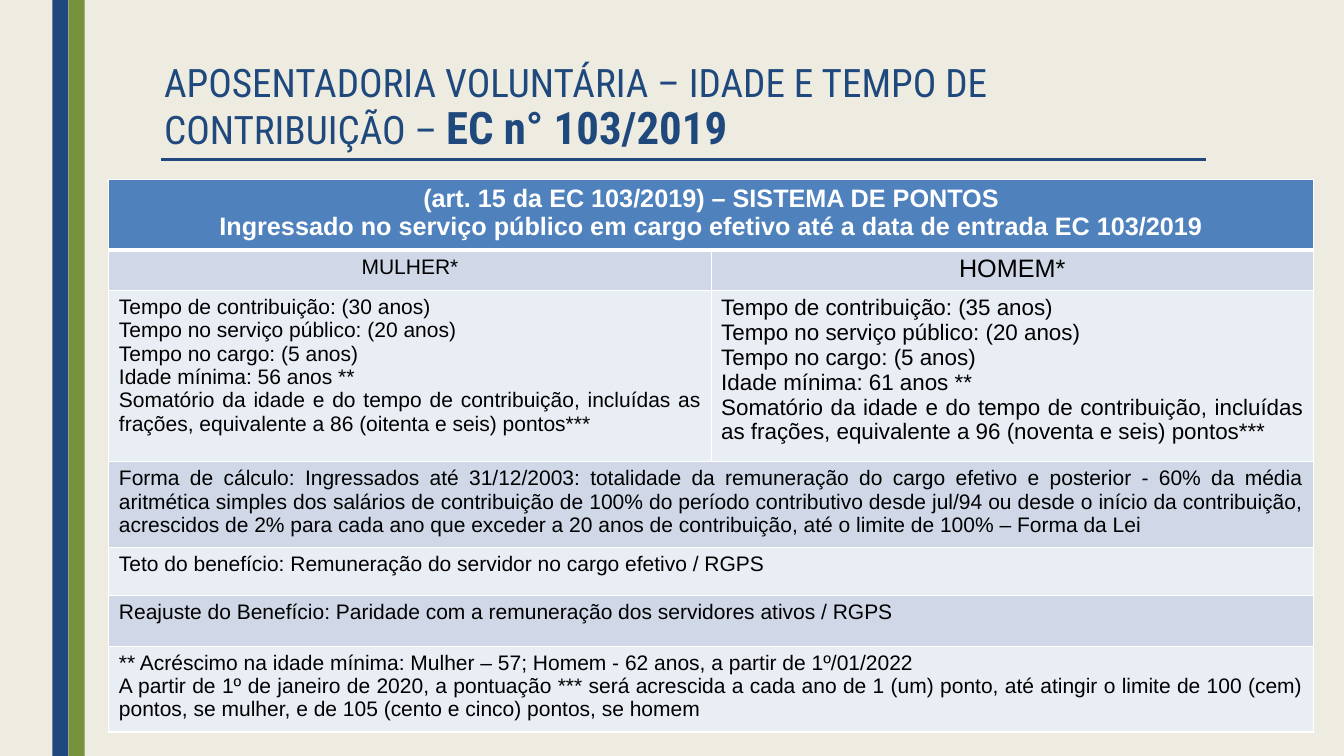
from lxml import etree
from pptx import Presentation, util as u
from pptx.dml.color import RGBColor
from pptx.enum import shapes, text
from pptx.oxml.ns import qn

COLORS = {"background": "EEECE1", "navy": "1F497D", "green": "76923C", "header": "4F81BD",
          "band": "D0D8E8", "light": "E9EDF4", "white": "FFFFFF", "black": "000000"}
COLUMNS, ROWS = 160, 90
CENTER, JUSTIFY = text.PP_ALIGN.CENTER, text.PP_ALIGN.JUSTIFY


class SlideBuilder:
    """Holds the style and the current slide; lengths are grid columns and rows."""

    def __init__(self, presentation):
        self.presentation = presentation
        self.slide = presentation.slides.add_slide(presentation.slide_layouts[6])
        self.paint(self.slide.background.fill, "background")

    def x(self, columns):
        return round(self.presentation.slide_width * columns / COLUMNS)

    def y(self, rows):
        return round(self.presentation.slide_height * rows / ROWS)

    def box(self, left, top, width, height):
        return self.x(left), self.y(top), self.x(width), self.y(height)

    def paint(self, fill, color):
        fill.solid()
        fill.fore_color.rgb = RGBColor.from_string(COLORS[color])

    def run(self, paragraph, words, color, **formats):
        run = paragraph.add_run()
        run.text = words
        run.font.color.rgb = RGBColor.from_string(COLORS[color])
        for name, value in formats.items():
            setattr(run.font, name, value)

    def stripe(self, left, width, color):
        shape = self.slide.shapes.add_shape(
            shapes.MSO_SHAPE.RECTANGLE, *self.box(left, 0, width, ROWS))
        shape.shadow.inherit = False
        self.paint(shape.fill, color)
        shape.line.fill.background()

    def rule(self, left, right, top, color, points):
        line = self.slide.shapes.add_connector(
            shapes.MSO_CONNECTOR.STRAIGHT, self.x(left), self.y(top), self.x(right), self.y(top))
        self.paint(line.line.fill, color)
        line.line.width = u.Pt(points)
        etree.SubElement(line._element.spPr, qn("a:effectLst"))

    def title(self, area, runs):
        frame = self.slide.shapes.add_textbox(*self.box(*area)).text_frame
        for name, value in {"word_wrap": True, "vertical_anchor": text.MSO_ANCHOR.TOP}.items():
            setattr(frame, name, value)
        paragraph = frame.paragraphs[0]
        paragraph.line_spacing = 0.89
        for words, points, bold in runs:
            self.run(paragraph, words, "navy", name="Roboto Condensed",
                     size=u.Pt(points), bold=bold)

    def borders(self, cell, bottom):
        properties = cell._tc.get_or_add_tcPr()
        widths = {"lnL": 1, "lnR": 1, "lnT": 1, "lnB": bottom}
        for position, (side, points) in enumerate(widths.items()):
            line = etree.Element(qn(f"a:{side}"), w=str(u.Pt(points)))
            fill = etree.SubElement(line, qn("a:solidFill"))
            etree.SubElement(fill, qn("a:srgbClr"), val=COLORS["white"])
            properties.insert(position, line)

    def table(self, left, top, width, rows):
        height = sum(row["height"] for row in rows)
        table = self.slide.shapes.add_table(
            len(rows), 2, *self.box(left, top, width, height)).table
        for index, row in enumerate(rows):
            table.rows[index].height = self.y(row["height"])
            header = index == 0
            for cell in table.rows[index].cells:
                self.paint(cell.fill, row["fill"])
                self.borders(cell, 3 if header else 1)
            if len(row["cells"]) == 1:
                table.cell(index, 0).merge(table.cell(index, 1))
            for column, (points, lines) in enumerate(row["cells"]):
                frame = table.cell(index, column).text_frame
                for number, words in enumerate(lines):
                    paragraph = frame.add_paragraph() if number else frame.paragraphs[0]
                    paragraph.alignment = row["align"]
                    self.run(paragraph, words, "white" if header else "black",
                             name="Arial", size=u.Pt(points), bold=header)


def table_row(height, fill, align, *cells):
    return {"height": height, "fill": fill, "align": align, "cells": cells}


def requirements(contribution, age, points):
    return [f"Tempo de contribuição: ({contribution} anos)",
            "Tempo no serviço público: (20 anos)",
            "Tempo no cargo: (5 anos)",
            f"Idade mínima: {age} anos **",
            "Somatório da idade e do tempo de contribuição, incluídas as frações, "
            f"equivalente a {points} pontos***"]


def main():
    presentation = Presentation()
    presentation.slide_width, presentation.slide_height = u.Inches(13.33), u.Inches(7.5)
    builder = SlideBuilder(presentation)

    # Side stripes and title
    for index, color in enumerate(("navy", "green")):
        builder.stripe(6.24 + 1.92 * index, 1.92, color)
    builder.rule(19.2, 143.55, 18.96, "navy", 2.25)
    builder.title((18.36, 7.08, 124.7, 9.48), [
        ("APOSENTADORIA VOLUNTÁRIA – IDADE E TEMPO DE CONTRIBUIÇÃO – ", 28, False),
        ("EC n° 103/2019", 32, True)])

    # Retirement rules
    builder.table(12.96, 21.36, 143.4, [
        table_row(8.28, "header", CENTER, (18, [
            "(art. 15 da EC 103/2019) – SISTEMA DE PONTOS",
            "Ingressado no serviço público em cargo efetivo até a data de entrada EC 103/2019"])),
        table_row(4.68, "band", CENTER, (15, ["MULHER*"]), (18, ["HOMEM*"])),
        table_row(19.32, "light", JUSTIFY,
                  (15, requirements(30, 56, "86 (oitenta e seis)")),
                  (16, requirements(35, 61, "96 (noventa e seis)"))),
        table_row(9.72, "band", JUSTIFY, (15, [
            "Forma de cálculo: Ingressados até 31/12/2003: totalidade da remuneração do cargo "
            "efetivo e posterior - 60% da média aritmética simples dos salários de contribuição "
            "de 100% do período contributivo desde jul/94 ou desde o início da contribuição, "
            "acrescidos de 2% para cada ano que exceder a 20 anos de contribuição, até o limite "
            "de 100% – Forma da Lei"])),
        table_row(5.76, "light", JUSTIFY, (15, [
            "Teto do benefício: Remuneração do servidor no cargo efetivo / RGPS"])),
        table_row(6, "band", JUSTIFY, (15, [
            "Reajuste do Benefício: Paridade com a remuneração dos servidores ativos / RGPS"])),
        table_row(9.72, "light", JUSTIFY, (15, [
            "** Acréscimo na idade mínima: Mulher – 57; Homem - 62 anos, a partir de 1º/01/2022",
            "A partir de 1º de janeiro de 2020, a pontuação *** será acrescida a cada ano de 1 "
            "(um) ponto, até atingir o limite de 100 (cem) pontos, se mulher, e de 105 (cento e "
            "cinco) pontos, se homem"])),
    ])
    presentation.save("out.pptx")


if __name__ == "__main__":
    main()
